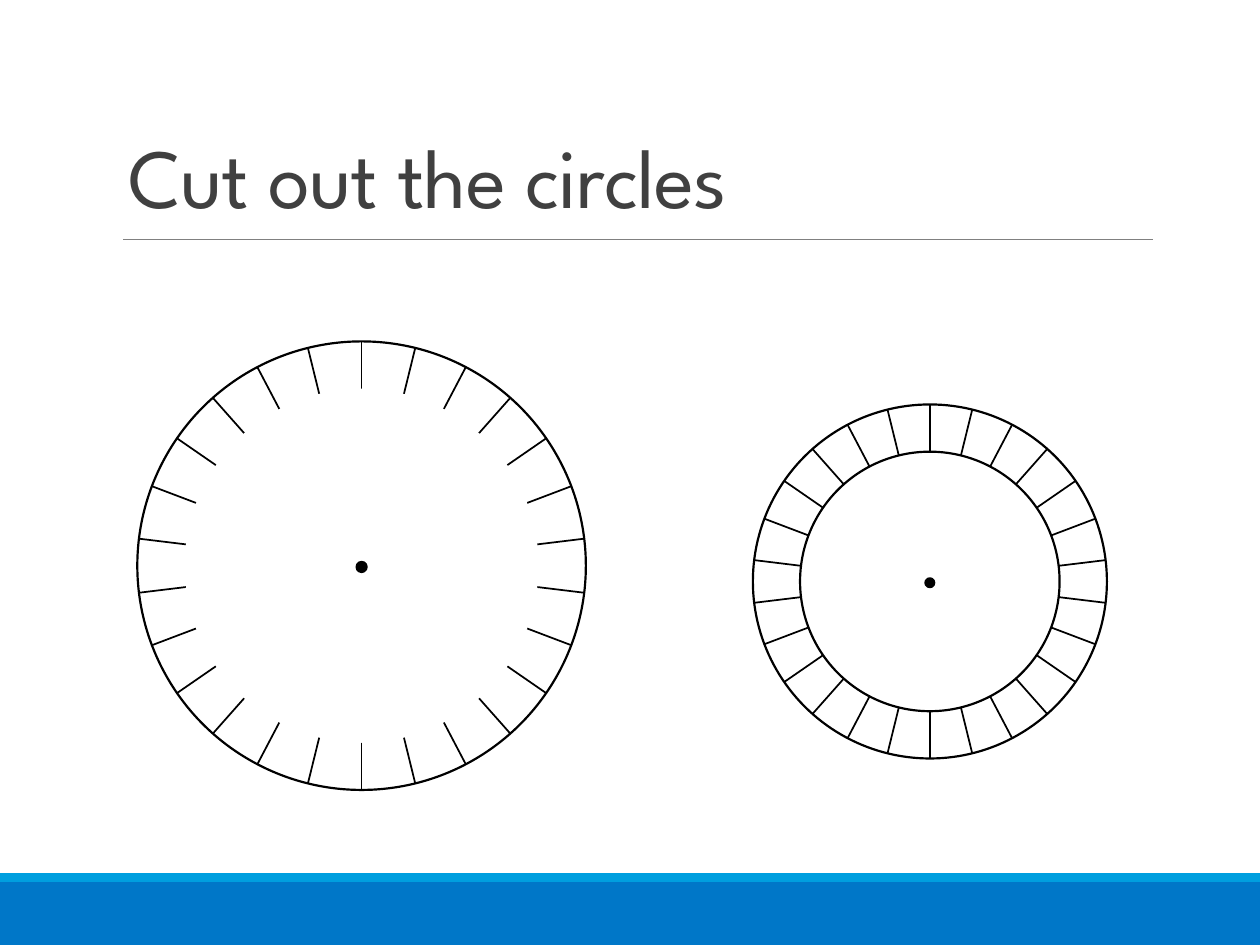
import math
from lxml import etree
from pptx import Presentation
from pptx import util as u
from pptx.dml.color import RGBColor
from pptx.enum import shapes, text
from pptx.oxml.ns import qn

COLORS = {"ink": "000000", "paper": "FFFFFF", "title": "404040",
          "rule": "808080", "band": "0077C8", "stripe": "009FDF"}
LETTERS = 26

deck = Presentation()
deck.slide_width, deck.slide_height = u.Inches(10), u.Inches(7.5)
page = deck.slides.add_slide(deck.slide_layouts[5])


def write(box, words, *, font, size, color, spacing, line_spacing, anchor):
    frame = box.text_frame
    frame.word_wrap = True
    frame.auto_size = text.MSO_AUTO_SIZE.NONE
    frame.vertical_anchor = anchor
    para = frame.paragraphs[0]
    para.alignment = text.PP_ALIGN.LEFT
    para.line_spacing = line_spacing
    span = para.add_run()
    span.text = words
    span.font.name, span.font.size = font, u.Pt(size)
    span.font.color.rgb = RGBColor.from_string(COLORS[color])
    span.font._element.set("spc", str(round(spacing * 100)))


def add_figure(parent, kind, left, top, width, height, fill=None, line=None, weight=1.25):
    """Add a filled shape, or a straight line when kind is None."""
    if kind is None:
        figure = parent.add_connector(
            shapes.MSO_CONNECTOR.STRAIGHT, u.Inches(left), u.Inches(top),
            u.Inches(left + width), u.Inches(top + height))
        etree.SubElement(figure._element.spPr, qn("a:effectLst"))
    else:
        figure = parent.add_shape(kind, *map(u.Inches, (left, top, width, height)))
        figure.shadow.inherit = False
        figure.fill.solid()
        figure.fill.fore_color.rgb = RGBColor.from_string(COLORS[fill])
    if line:
        figure.line.color.rgb = RGBColor.from_string(COLORS[line])
        figure.line.width = u.Pt(weight)
    else:
        figure.line.fill.background()


# Footer bands and the rule under the title
RECTANGLE, OVAL = shapes.MSO_SHAPE.RECTANGLE, shapes.MSO_SHAPE.OVAL
add_figure(page.shapes, RECTANGLE, 0, 7, 10, 0.5, fill="band")
add_figure(page.shapes, RECTANGLE, 0, 6.93, 10, 0.07, fill="stripe")
add_figure(page.shapes, None, 0.98, 1.9, 8.17, 0, line="rule", weight=0.5)

# Title
title = page.shapes.title
title.left, title.top = u.Inches(0.92), u.Inches(0.25)
title.width, title.height = u.Inches(8.25), u.Inches(1.59)
write(title, "Cut out the circles", font="League Spartan", size=48, color="title",
      spacing=-0.5, line_spacing=0.85, anchor=text.MSO_ANCHOR.BOTTOM)

# Cipher wheels: centre x, centre y, outer radius, inner radius, inner outline, dot radius
wheels = [(2.87, 4.49, 1.78, 1.405, None, 0.04),
          (7.38, 4.615, 1.405, 1.03, "ink", 0.035)]
for x, y, outer, inner, inner_line, dot in wheels:
    wheel = page.shapes.add_group_shape().shapes
    add_figure(wheel, OVAL, x - outer, y - outer, 2 * outer, 2 * outer, "paper", "ink")
    # Each diameter marks two opposite letter cells
    for step in range(LETTERS // 2):
        angle = math.tau * step / LETTERS
        dx, dy = outer * math.sin(angle), outer * math.cos(angle)
        add_figure(wheel, None, x + dx, y - dy, -2 * dx, 2 * dy, line="ink", weight=1)
    add_figure(wheel, OVAL, x - inner, y - inner, 2 * inner, 2 * inner, "paper", inner_line)
    add_figure(wheel, OVAL, x - dot, y - dot + 0.01, 2 * dot, 2 * dot, "ink", "ink")

deck.save("out.pptx")
